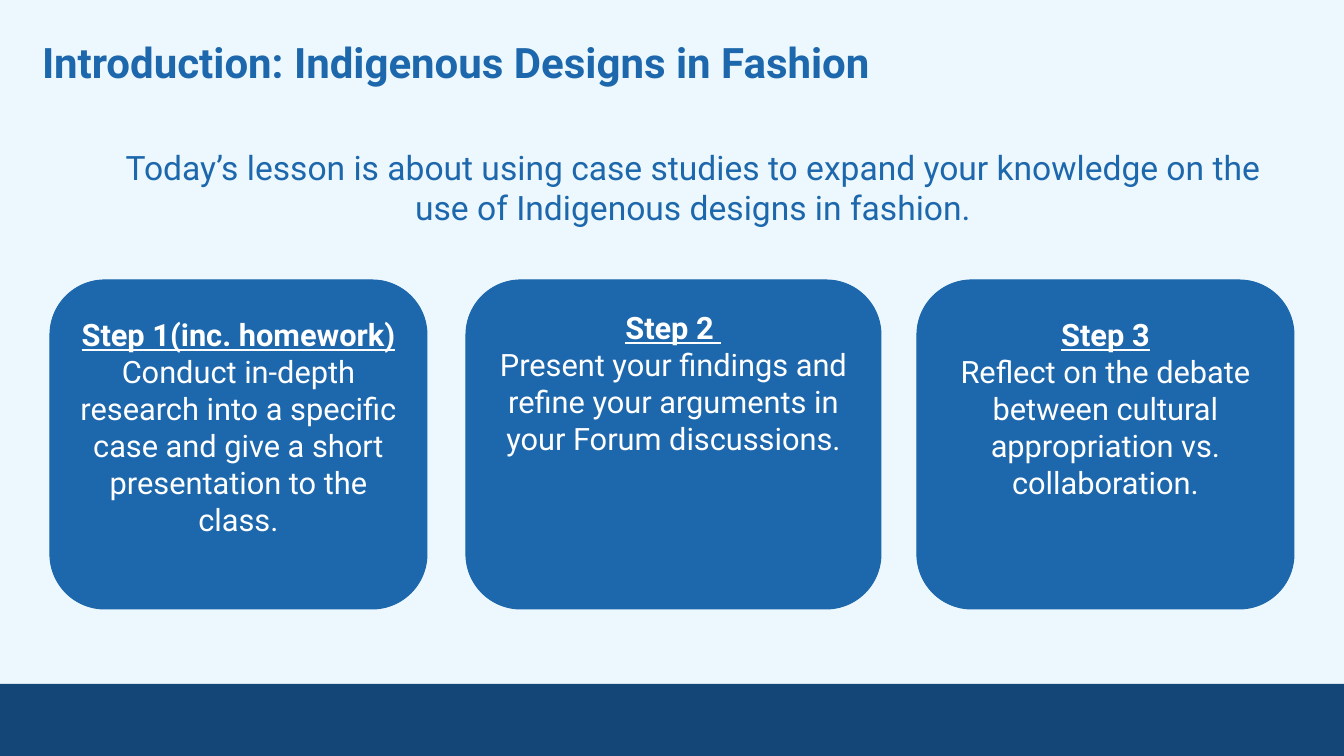
"""Build the introduction slide for a lesson on Indigenous designs in fashion."""
from dataclasses import dataclass

from pptx import Presentation
from pptx import util as u
from pptx.dml.color import RGBColor
from pptx.enum import shapes, text

EMU_PER_PX = 914400 / 100.8
FONT = "Roboto"
COLOURS = {"sky": "ECF8FE", "blue": "1D67AC", "navy": "144777", "white": "FFFFFF"}
CARD_TOP, CARD_HEIGHT = 280, 329


@dataclass(frozen=True)
class Step:
    heading: str
    task: str
    left: int
    width: int
    top_inset: int


STEPS = (
    Step("Step 1(inc. homework)",
         "Conduct in-depth research into a specific case and give a short "
         "presentation to the class.", 50, 377, 20),
    Step("Step 2 ",
         "Present your findings and refine your arguments in your Forum discussions.",
         466, 415, 13),
    Step("Step 3",
         "Reflect on the debate between cultural appropriation vs. collaboration.",
         917, 377, 20),
)


def px(length: int) -> u.Emu:
    """Turn pixels into EMU."""
    return u.Emu(round(length * EMU_PER_PX))


def colour(name: str) -> RGBColor:
    """Look up a named colour."""
    return RGBColor.from_string(COLOURS[name])


def set_frame(frame, inset: int, top_inset: int) -> None:
    """Wrap a text frame, anchor it at the top and set its insets."""
    frame.word_wrap = True
    frame.auto_size = text.MSO_AUTO_SIZE.NONE
    frame.vertical_anchor = text.MSO_ANCHOR.TOP
    frame.margin_left = frame.margin_right = frame.margin_bottom = px(inset)
    frame.margin_top = px(top_inset)


def add_run(paragraph, words: str, size: int, ink: str, strong: bool = False,
            underline: bool = False) -> None:
    """Add one formatted run to a paragraph."""
    run = paragraph.add_run()
    run.text = words
    font = run.font
    font.name, font.size = FONT, u.Pt(size)
    font.bold, font.underline = strong, underline
    font.color.rgb = colour(ink)


def add_title(slide) -> None:
    """Place and fill the title placeholder."""
    title = slide.shapes.title
    title.left, title.top, title.width, title.height = map(px, (29, 23, 1229, 78))
    set_frame(title.text_frame, 13, 13)
    paragraph = title.text_frame.paragraphs[0]
    paragraph.alignment = text.PP_ALIGN.LEFT
    add_run(paragraph, "Introduction: Indigenous Designs in Fashion", 30, "blue", True)


def add_summary(slide) -> None:
    """Add the sentence that sums up the lesson."""
    summary = slide.shapes.add_textbox(*map(px, (92, 137, 1202, 142)))
    set_frame(summary.text_frame, 10, 10)
    paragraph = summary.text_frame.paragraphs[0]
    paragraph.alignment = text.PP_ALIGN.CENTER
    add_run(paragraph, "Today’s lesson is about using case studies to expand your "
            "knowledge on the use of Indigenous designs in fashion.", 24, "blue")


def add_block(slide, kind, box: tuple[int, int, int, int], fill: str):
    """Add a flat shape filled and outlined in one colour."""
    block = slide.shapes.add_shape(kind, *map(px, box))
    block.shadow.inherit = False
    block.fill.solid()
    block.fill.fore_color.rgb = block.line.color.rgb = colour(fill)
    block.line.width = u.Pt(0.75)
    return block


def add_step(slide, step: Step) -> None:
    """Add the rounded card of one lesson step."""
    card = add_block(slide, shapes.MSO_SHAPE.ROUNDED_RECTANGLE,
                     (step.left, CARD_TOP, step.width, CARD_HEIGHT), "blue")
    frame = card.text_frame
    set_frame(frame, 10, step.top_inset)
    heading, task = frame.paragraphs[0], frame.add_paragraph()
    heading.alignment = task.alignment = text.PP_ALIGN.CENTER
    add_run(heading, step.heading, 22, "white", True, True)
    add_run(task, step.task, 22, "white")


def main() -> None:
    """Draw the slide and save it."""
    deck = Presentation()
    deck.slide_width, deck.slide_height = px(1344), px(756)
    slide = deck.slides.add_slide(deck.slide_layouts.get_by_name("Title Only"))
    slide.background.fill.solid()
    slide.background.fill.fore_color.rgb = colour("sky")
    footer = add_block(slide, shapes.MSO_SHAPE.RECTANGLE, (0, 684, 1344, 72), "navy")
    footer.line.fill.background()
    add_title(slide)
    add_summary(slide)
    for step in STEPS:
        add_step(slide, step)
    deck.save("out.pptx")


if __name__ == "__main__":
    main()
